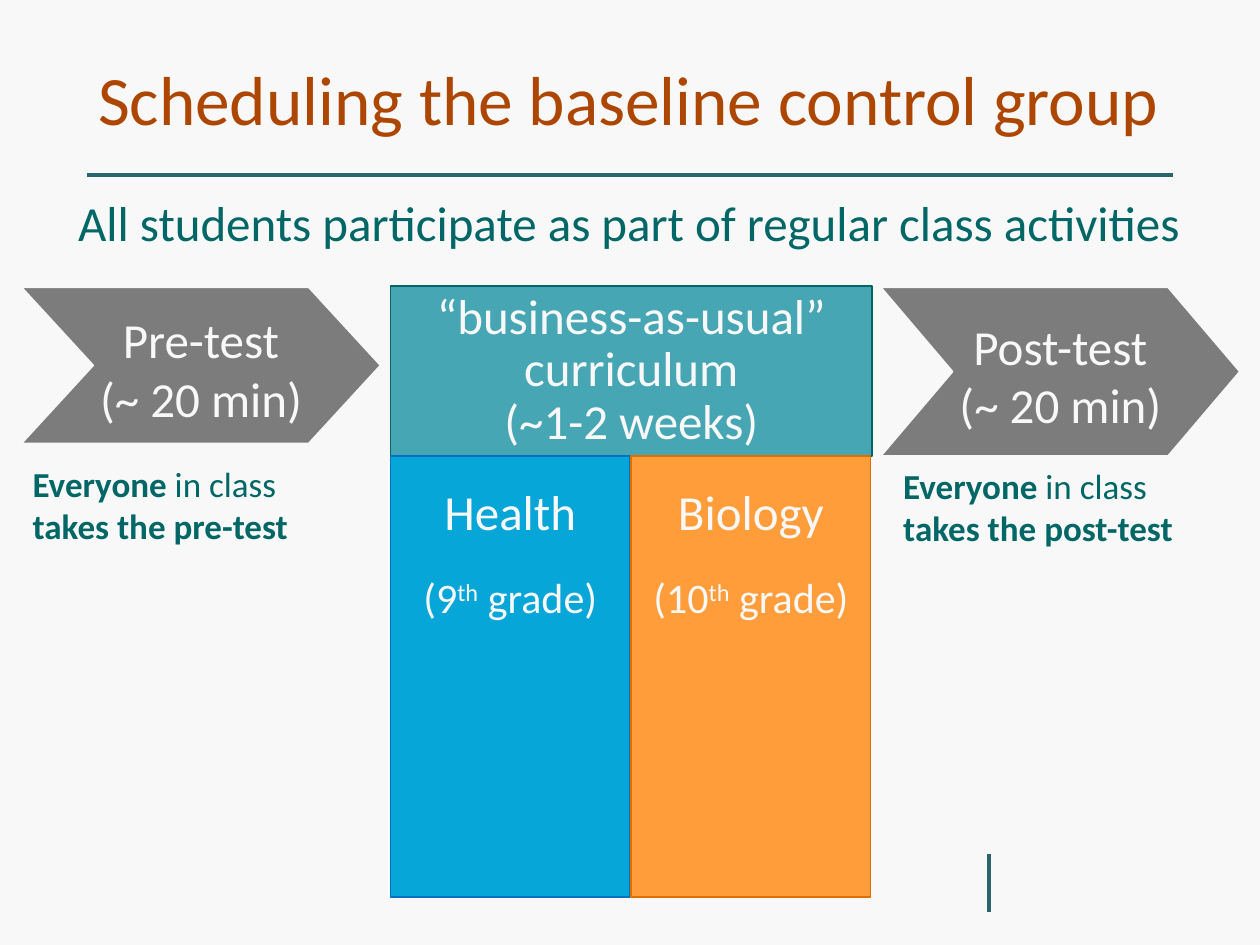
from pptx import Presentation
from pptx.dml.color import RGBColor
from pptx.enum.shapes import MSO_CONNECTOR, MSO_SHAPE
from pptx.enum.text import MSO_ANCHOR, PP_ALIGN
from pptx.oxml.ns import qn
from pptx.util import Inches, Pt

LEFT, CENTER = PP_ALIGN.LEFT, PP_ALIGN.CENTER
TOP, MIDDLE = MSO_ANCHOR.TOP, MSO_ANCHOR.MIDDLE
RECT, STRAIGHT = MSO_SHAPE.RECTANGLE, MSO_CONNECTOR.STRAIGHT

PALE = RGBColor(0xF8, 0xF8, 0xF8)
RUST = RGBColor(0xAC, 0x46, 0x00)
GREEN = RGBColor(0x00, 0x66, 0x66)
SLATE = RGBColor(0x2B, 0x65, 0x6C)
TEAL = RGBColor(0x47, 0xA6, 0xB3)
SKY = RGBColor(0x06, 0xA6, 0xD8)
BLUE = RGBColor(0x00, 0x70, 0xC0)
AMBER = RGBColor(0xFF, 0x9D, 0x3B)
BROWN = RGBColor(0xDE, 0x6F, 0x00)
GREY = RGBColor(0x7C, 0x7C, 0x7C)
FONT = "Calibri"


def set_frame(shape, anchor=TOP, pads=(0.1, 0.05, 0.1, 0.05)):
    frame = shape.text_frame
    frame.word_wrap = True
    frame.vertical_anchor = anchor
    (frame.margin_left, frame.margin_top,
     frame.margin_right, frame.margin_bottom) = map(Inches, pads)
    return frame


def write(frame, lines, color, align=CENTER, space=1.0):
    """Each line is (size, text, ...); the texts become runs."""
    for i, (size, *texts) in enumerate(lines):
        para = frame.add_paragraph() if i else frame.paragraphs[0]
        para.alignment = align
        para.line_spacing = space
        for text in texts:
            run = para.add_run()
            run.text = text
            run.font.name = FONT
            run.font.size = Pt(size)
            run.font.color.rgb = color
    return frame.paragraphs


def add_text(slide, box, lines, color, align=LEFT, anchor=TOP, space=1.0):
    shape = slide.shapes.add_textbox(*map(Inches, box))
    return write(set_frame(shape, anchor), lines, color, align, space)


def paint(shape, fill, edge):
    shape.shadow.inherit = False
    shape.fill.solid()
    shape.fill.fore_color.rgb = fill
    shape.line.color.rgb = edge
    shape.line.width = Pt(1)


def add_rule(slide, *ends):
    line = slide.shapes.add_connector(STRAIGHT, *map(Inches, ends))
    line.line.color.rgb = SLATE
    line.line.width = Pt(2.25)
    props = line._element.spPr
    props.append(props.makeelement(qn("a:effectLst"), {}))


def add_block(slide, box, fill, edge):
    shape = slide.shapes.add_shape(RECT, *map(Inches, box))
    paint(shape, fill, edge)
    return shape


def add_course(slide, left, name, grade, side, fill, edge):
    shape = add_block(slide, (left, 3.62, 1.9, 3.5), fill, edge)
    frame = set_frame(shape, TOP, (side, 0.2, side, 0.05))
    lines = [(28, name), (24, "(" + grade, "th", " grade)")]
    head, foot = write(frame, lines, PALE)
    head.space_after = Pt(6)
    foot.space_before = Pt(12)
    foot.runs[1]._r.get_or_add_rPr().set("baseline", "30000")


def add_test(slide, left, height, name, note):
    # Chevron
    top, width, notch = 2.28, 2.85, 0.57
    right, mid, low = left + width, top + height / 2, top + height
    spots = [(right - notch, top), (right, mid), (right - notch, low),
             (left, low), (left + notch, mid)]
    pen = slide.shapes.build_freeform(Inches(left), Inches(top))
    pen.add_line_segments([(Inches(x), Inches(y)) for x, y in spots])
    shape = pen.convert_to_shape()
    paint(shape, GREY, PALE)
    frame = set_frame(shape, MIDDLE, (0.6, 0.12, 0.6, 0.07))
    write(frame, [(28, name), (28, "(~ 20 min)")], PALE)

    # Note below
    x, y = note
    line = (20, "Everyone", " in class ", f"takes the {name.lower()}")
    para = add_text(slide, (x, y, 2.69, 0.77), [line], GREEN)[0]
    for run, bold in zip(para.runs, (True, False, True)):
        run.font.bold = bold


def main():
    deck = Presentation()
    deck.slide_width, deck.slide_height = Inches(10), Inches(7.5)
    slide = deck.slides.add_slide(deck.slide_layouts[6])
    slide.background.fill.solid()
    slide.background.fill.fore_color.rgb = PALE

    # Rules
    add_rule(slide, 7.85, 6.78, 7.85, 7.24)
    add_rule(slide, 0.69, 1.39, 9.31, 1.39)

    # Title and lead line
    add_text(slide, (0.68, 0.32, 8.62, 0.99),
             [(39.6, "Scheduling the baseline control group")],
             RUST, anchor=MIDDLE, space=0.9)
    add_text(slide, (0.42, 1.48, 9.14, 0.57),
             [(28, "All students participate as part of "
                   "regular class activities")], GREEN, CENTER)

    # Curriculum and its two courses
    head = add_block(slide, (3.1, 2.27, 3.82, 1.35), TEAL, GREEN)
    write(set_frame(head, MIDDLE),
          [(28, "“business-as-usual” curriculum"), (28, "(~1-2 weeks)")],
          PALE, space=0.9)
    add_course(slide, 3.1, "Health", "9", 0.1, SKY, BLUE)
    add_course(slide, 5.01, "Biology", "10", 0.05, AMBER, BROWN)

    # Tests before and after
    add_test(slide, 0.17, 1.24, "Pre-test", (0.16, 3.62))
    add_test(slide, 6.99, 1.34, "Post-test", (7.07, 3.64))

    deck.save("out.pptx")


if __name__ == "__main__":
    main()
